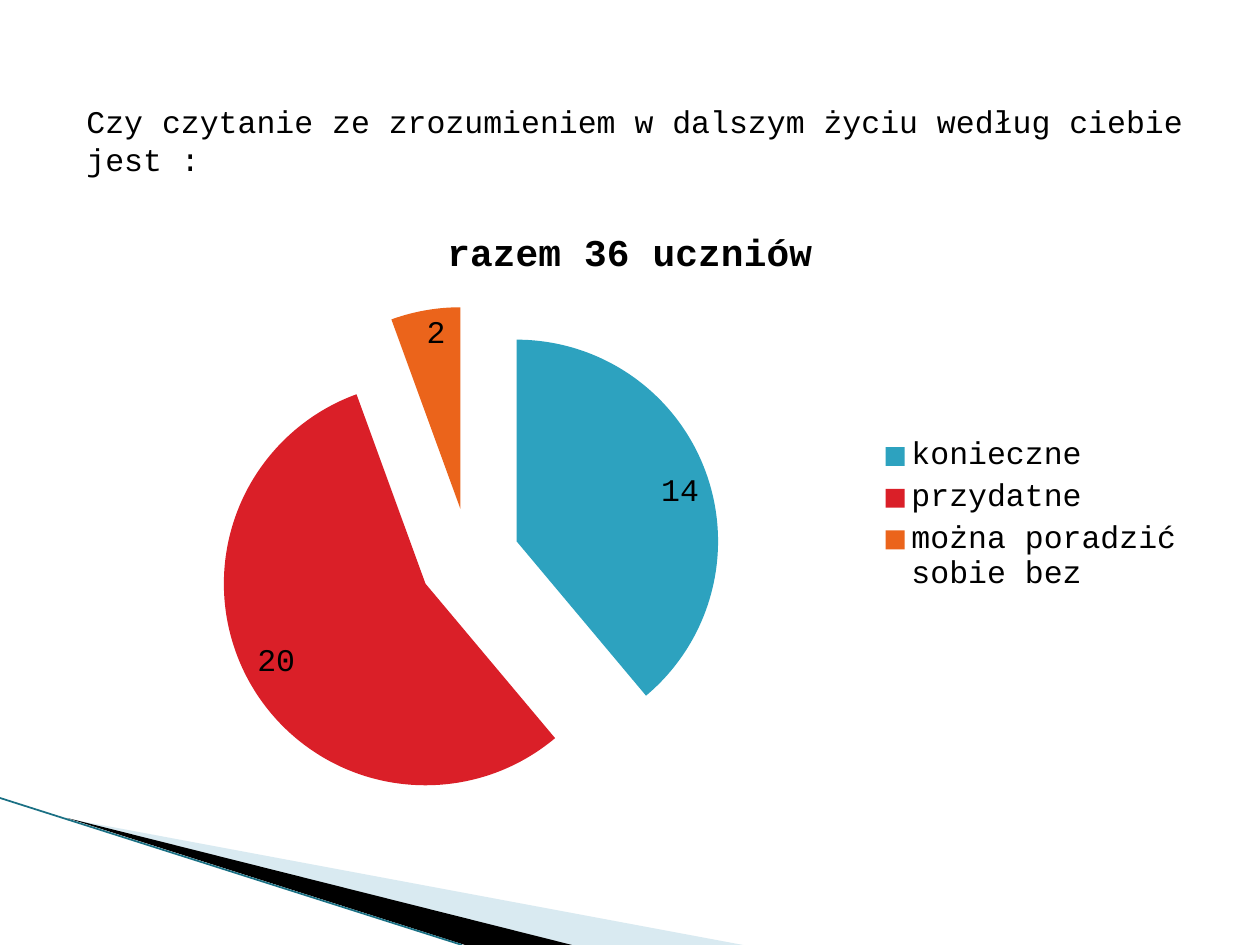
from lxml.etree import SubElement
from pptx import Presentation
from pptx.chart.data import CategoryChartData
from pptx.dml.color import RGBColor
from pptx.enum.chart import XL_CHART_TYPE, XL_LABEL_POSITION, XL_LEGEND_POSITION
from pptx.enum.shapes import MSO_CONNECTOR
from pptx.oxml.ns import qn
from pptx.util import Emu, Pt

FONT = "Courier New"
BLACK = "000000"
EMU_PER_PX = 914400 / 126


def px(n):
    return Emu(round(n * EMU_PER_PX))


def rgb(value):
    return RGBColor.from_string(value)


def style_font(font, size, bold=False):
    font.name = FONT
    font.size = Pt(size)
    font.bold = bold
    font.color.rgb = rgb(BLACK)


def add_wedge(s, points, color, opacity=None):
    builder = s.shapes.build_freeform(*points[0], scale=EMU_PER_PX)
    builder.add_line_segments(points[1:], close=True)
    sp = builder.convert_to_shape()
    sp.shadow.inherit = False
    sp.line.fill.background()
    sp.fill.solid()
    sp.fill.fore_color.rgb = rgb(color)
    if opacity is not None:
        clr = sp.fill._xPr.find(".//" + qn("a:srgbClr"))
        SubElement(clr, qn("a:alpha")).set("val", str(opacity * 1000))


def add_rule(s, x1, y1, x2, y2, color, width):
    line = s.shapes.add_connector(MSO_CONNECTOR.STRAIGHT, px(x1), px(y1), px(x2), px(y2))
    line.line.color.rgb = rgb(color)
    line.line.width = Pt(width)
    SubElement(line._element.spPr, qn("a:effectLst"))


def add_question(s, text, x, y, w, h):
    tf = s.shapes.add_textbox(px(x), px(y), px(w), px(h)).text_frame
    tf.word_wrap = True
    tf.text = text
    style_font(tf.paragraphs[0].runs[0].font, 18)


def add_exploded_pie(s, title, answers, x, y, w, h):
    data = CategoryChartData()
    data.categories = [name for name, _, _ in answers]
    data.add_series(title, [count for _, count, _ in answers])
    chart = s.shapes.add_chart(
        XL_CHART_TYPE.PIE, px(x), px(y), px(w), px(h), data).chart
    style_font(chart.font, 18)

    # Title and legend
    chart.has_title = True
    tf = chart.chart_title.text_frame
    tf.text = title
    style_font(tf.paragraphs[0].runs[0].font, 21.6, bold=True)
    chart.has_legend = True
    chart.legend.position = XL_LEGEND_POSITION.RIGHT
    chart.legend.include_in_layout = False

    # Slices, pulled apart
    plot = chart.plots[0]
    plot.vary_by_categories = True
    series = plot.series[0]
    for i, (_, _, color) in enumerate(answers):
        fill = series.points[i].format.fill
        fill.solid()
        fill.fore_color.rgb = rgb(color)
    ser = series._element
    explosion = SubElement(ser, qn("c:explosion"))
    explosion.set("val", "25")
    ser.find(qn("c:tx")).addnext(explosion)

    # Value labels
    plot.has_data_labels = True
    labels = plot.data_labels
    labels.show_value = True
    labels.show_percentage = False
    labels.position = XL_LABEL_POSITION.INSIDE_END
    style_font(labels.font, 18)


def main():
    prs = Presentation()
    prs.slide_width, prs.slide_height = px(1260), px(945)
    s = prs.slides.add_slide(prs.slide_layouts[6])

    # Corner decoration
    add_wedge(s, [(69, 819), (743, 945), (571, 945)], "A0CBDC", 40)
    add_wedge(s, [(67, 818), (572, 945), (465, 945)], BLACK)
    add_rule(s, 0, 798, 462, 945, "1A7084", 1)

    # Question and answers
    add_question(
        s, "Czy czytanie ze zrozumieniem w dalszym życiu według ciebie jest :",
        74, 96, 1150, 82)
    answers = [
        ("konieczne", 14, "2DA2BF"),
        ("przydatne", 20, "DA1F28"),
        ("można poradzić sobie bez", 2, "EB641B"),
    ]
    add_exploded_pie(s, "razem 36 uczniów", answers, 63, 204, 1134, 624)

    prs.save("out.pptx")


if __name__ == "__main__":
    main()
